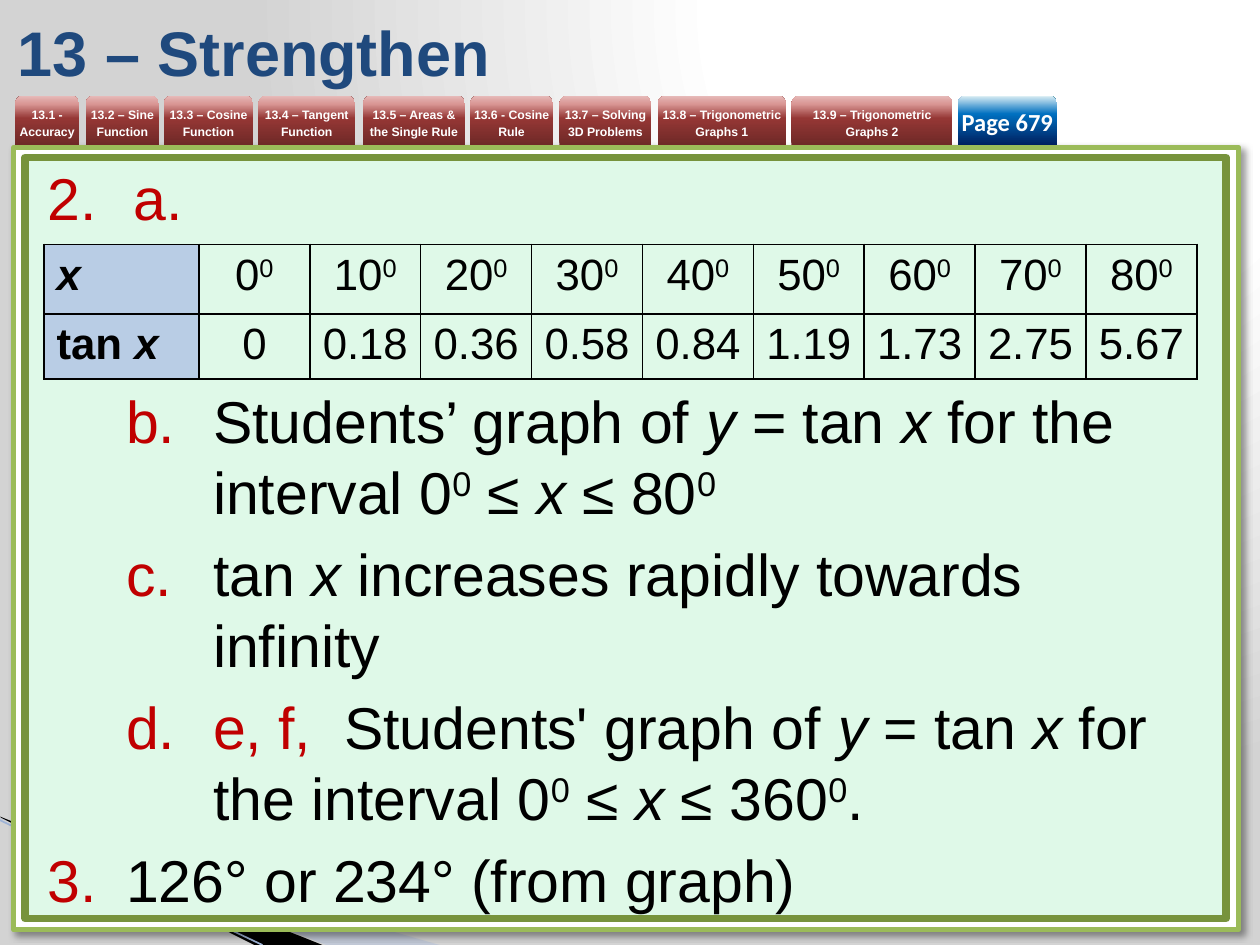
"""Build the "13 – Strengthen" answer slide with its chapter tabs and tangent table."""
from lxml import etree
from pptx import Presentation
from pptx.dml.color import RGBColor
from pptx.enum.shapes import MSO_CONNECTOR, MSO_SHAPE
from pptx.enum.text import MSO_ANCHOR, MSO_AUTO_SIZE, PP_ALIGN
from pptx.oxml import parse_xml
from pptx.oxml.ns import nsdecls, qn
from pptx.util import Pt

CENTER, LEFT, MIDDLE = PP_ALIGN.CENTER, PP_ALIGN.LEFT, MSO_ANCHOR.MIDDLE
RECT, TAB = MSO_SHAPE.RECTANGLE, MSO_SHAPE.ROUND_2_SAME_RECTANGLE

BLACK = RGBColor(0x00, 0x00, 0x00)
WHITE = RGBColor(0xFF, 0xFF, 0xFF)
NAVY = RGBColor(0x1F, 0x49, 0x7D)
RED = RGBColor(0xC0, 0x00, 0x00)
MINT = RGBColor(0xDF, 0xF9, 0xE8)
GREEN = RGBColor(0x9B, 0xBB, 0x59)
OLIVE = RGBColor(0x77, 0x93, 0x3C)
HEADER_BLUE = RGBColor(0xB9, 0xCD, 0xE5)
PALE_BLUE = RGBColor(0xA7, 0xB9, 0xDB)
EDGE_BLUE = RGBColor(0x9E, 0xB3, 0xD6)
BACKDROP = [(0, "FFFFFF"), (40, "FFFFFF"), (100, "D3D3D3")]
TAB_RED = [(0, "6F2927"), (54, "953735"), (83, "D99694"), (100, "E6B9B8")]
TAB_BLUE = [(0, "002060"), (63, "0070C0"), (100, "DBEEF4")]

TITLE = "13 – Strengthen"
CHAPTERS = [
    ("13.1 - Accuracy", 8.6, 36.7),
    ("13.2 – Sine Function", 49, 41.8),
    ("13.3 – Cosine Function", 93.6, 51.1),
    ("13.4 – Tangent Function", 147.6, 55.4),
    ("13.5 – Areas & the Single Rule", 207.4, 58.3),
    ("13.6 - Cosine Rule", 268.6, 47.5),
    ("13.7 – Solving 3D Problems", 319.7, 52.6),
    ("13.8 – Trigonometric Graphs 1", 375.8, 73.4),
    ("13.9 – Trigonometric Graphs 2", 452.2, 92.2),
]
PAGE = ("Page 679", 547.2, 56.9)

ITALIC, RAISED, MARKED = "italic", "raised", "marked"
DEGREE = ("0", RAISED)
X = ("x", ITALIC)
ANSWERS = [
    (0, "arabicPeriod", 49, 0, [("a.", MARKED)]),
    (1, "alphaLcPeriod", 94.3, 87, [
        ("Students’ graph of ", ""), ("y ", ITALIC), ("= tan ", ""), ("x ", ITALIC),
        ("for the interval 0", ""), DEGREE, (" ≤ ", ""), X, (" ≤ 80", ""), DEGREE]),
    (1, "alphaLcPeriod", 94.3, 6.5, [
        ("tan ", ""), X, (" increases rapidly towards infinity", "")]),
    (1, "alphaLcPeriod", 94.3, 6.5, [
        ("e, f,  ", MARKED), ("Students' graph of ", ""), ("y", ITALIC), (" = tan ", ""),
        ("x ", ITALIC), ("for the interval 0", ""), DEGREE, (" ≤ ", ""), X,
        (" ≤ 360", ""), DEGREE, (".", "")]),
    (0, "arabicPeriod", 44.6, 6.5, [("126° or 234° (from graph)", "")]),
]
HANGING = {0: None, 1: 49.7}
ANGLES = [0, 10, 20, 30, 40, 50, 60, 70, 80]
TANGENTS = ["0", "0.18", "0.36", "0.58", "0.84", "1.19", "1.73", "2.75", "5.67"]
TABLE_ROWS = [
    [[X]] + [[(str(angle), ""), DEGREE] for angle in ANGLES],
    [[("tan ", ""), X]] + [[(value, "")] for value in TANGENTS],
]


def gradient_xml(stops, direction):
    stop_list = "".join(
        f'<a:gs pos="{position * 1000}"><a:srgbClr val="{color}"/></a:gs>'
        for position, color in stops)
    return parse_xml(f'<a:gradFill {nsdecls("a")} rotWithShape="1">'
                     f"<a:gsLst>{stop_list}</a:gsLst>{direction}</a:gradFill>")


def set_gradient(fill, parent, stops, direction):
    fill.gradient()
    parent.replace(parent.find(qn("a:gradFill")), gradient_xml(stops, direction))


def write_runs(paragraph, pieces, size, bold=False):
    for text, style in pieces:
        run = paragraph.add_run()
        run.text = text
        font = run.font
        font.name, font.size, font.bold = "Arial", Pt(size), bold
        font.italic = style == ITALIC
        font.color.rgb = RED if style == MARKED else BLACK
        if style == RAISED:
            run._r.get_or_add_rPr().set("baseline", "30000")


def add_frame(shapes, box, fill, line, width):
    frame = shapes.add_shape(RECT, *map(Pt, box))
    frame.shadow.inherit = False
    frame.fill.solid()
    frame.fill.fore_color.rgb = fill
    frame.line.color.rgb = line
    frame.line.width = Pt(width)
    return frame


def add_tab(shapes, entry, stops, font_name, size, spacing=None):
    label, left, width = entry
    tab = shapes.add_shape(TAB, Pt(left), Pt(54.7), Pt(width), Pt(28.1))
    tab.shadow.inherit = False
    tab.line.fill.background()
    set_gradient(tab.fill, tab._element.spPr, stops, '<a:lin ang="16200000" scaled="0"/>')
    frame = tab.text_frame
    frame.margin_left = frame.margin_right = frame.margin_top = frame.margin_bottom = 0
    frame.vertical_anchor, frame.word_wrap = MIDDLE, True
    frame.text = label
    paragraph = frame.paragraphs[0]
    paragraph.alignment = CENTER
    if spacing:
        paragraph.line_spacing = Pt(spacing)
    font = paragraph.runs[0].font
    font.name, font.size, font.bold = font_name, Pt(size), True
    font.color.rgb = WHITE


def add_wedge(shapes, points, color):
    corners = [(Pt(x), Pt(y)) for x, y in points]
    builder = shapes.build_freeform(*corners[0], scale=1.0)
    builder.add_line_segments(corners[1:], close=True)
    wedge = builder.convert_to_shape()
    wedge.shadow.inherit = False
    wedge.fill.solid()
    wedge.fill.fore_color.rgb = color
    wedge.line.fill.background()
    return wedge


def add_decoration(shapes):
    pale = add_wedge(shapes, [(0, 468), (251.3, 540), (186.5, 540), (0, 467.3)], PALE_BLUE)
    tint = pale._element.spPr.find(".//" + qn("a:srgbClr"))
    etree.SubElement(tint, qn("a:alpha"), val="40000")
    add_wedge(shapes, [(0, 466.6), (184.3, 540), (145.4, 540), (0.7, 467.3)], BLACK)
    edge = shapes.add_connector(MSO_CONNECTOR.STRAIGHT, Pt(0), Pt(468.7), Pt(150), Pt(540))
    edge.line.color.rgb = EDGE_BLUE
    edge.line.width = Pt(0.95)
    etree.SubElement(edge._element.spPr, qn("a:effectLst"))

    outer = add_frame(shapes, (7.9, 84.2, 700, 447.1), WHITE, GREEN, 3)
    outer._element.spPr.find(qn("a:effectLst")).append(parse_xml(
        f'<a:outerShdw {nsdecls("a")} blurRad="50800" dist="38100" dir="2700000">'
        '<a:srgbClr val="000000"><a:alpha val="40000"/></a:srgbClr></a:outerShdw>'))
    add_frame(shapes, (14.4, 90, 686.2, 434.9), MINT, OLIVE, 4.33)


def place(placeholder, box):
    placeholder.left, placeholder.top, placeholder.width, placeholder.height = map(Pt, box)
    placeholder.text_frame.auto_size = MSO_AUTO_SIZE.NONE
    tree = placeholder._element.getparent()
    tree.append(placeholder._element)


def fill_title(title):
    place(title, (2.9, 3.6, 607, 51.1))
    title.text_frame.text = TITLE
    title.text_frame.vertical_anchor = MIDDLE
    paragraph = title.text_frame.paragraphs[0]
    paragraph.alignment = LEFT
    font = paragraph.runs[0].font
    font.name, font.size, font.bold = "Arial", Pt(36), True
    font.color.rgb = NAVY


def fill_answers(body):
    place(body, (20.2, 88.6, 674.6, 439.9))
    frame = body.text_frame
    for index, (level, numbering, indent, gap, pieces) in enumerate(ANSWERS):
        paragraph = frame.paragraphs[0] if index == 0 else frame.add_paragraph()
        paragraph.level = level
        paragraph.line_spacing = 1.0
        paragraph.space_before = Pt(gap)
        properties = paragraph._p.get_or_add_pPr()
        properties.set("marL", str(Pt(indent)))
        properties.set("indent", str(-Pt(HANGING[level] or indent)))
        color = etree.SubElement(properties, qn("a:buClr"))
        etree.SubElement(color, qn("a:srgbClr"), val=str(RED))
        etree.SubElement(properties, qn("a:buFont"), typeface="+mj-lt")
        etree.SubElement(properties, qn("a:buAutoNum"), type=numbering, startAt="2")
        write_runs(paragraph, pieces, 33.7)


def add_tangent_table(shapes):
    columns = len(TABLE_ROWS[0])
    table = shapes.add_table(2, columns, Pt(25.2), Pt(139.7), Pt(658.8), Pt(77)).table
    for index, column in enumerate(table.columns):
        column.width = Pt(88.5 if index == 0 else 63.36)
    for row, height, entries in zip(table.rows, (39.6, 37.4), TABLE_ROWS):
        row.height = Pt(height)
        for index, (cell, pieces) in enumerate(zip(row.cells, entries)):
            heading = index == 0
            paragraph = cell.text_frame.paragraphs[0]
            paragraph.alignment = LEFT if heading else CENTER
            write_runs(paragraph, pieces, 25, heading)
            properties = cell._tc.get_or_add_tcPr()
            for side in ("lnL", "lnR", "lnT", "lnB"):
                properties.append(parse_xml(
                    f'<a:{side} {nsdecls("a")} w="12700"><a:solidFill>'
                    f'<a:srgbClr val="{BLACK}"/></a:solidFill></a:{side}>'))
            if heading:
                cell.fill.solid()
                cell.fill.fore_color.rgb = HEADER_BLUE
            else:
                cell.fill.background()


def main():
    deck = Presentation()
    deck.slide_width, deck.slide_height = Pt(720), Pt(540)
    slide = deck.slides.add_slide(deck.slide_layouts[1])
    shapes = slide.shapes
    title, body = slide.placeholders
    set_gradient(slide.background.fill, slide._element.cSld.bg.bgPr, BACKDROP,
                 '<a:path path="circle"><a:fillToRect l="65000" b="98000"/></a:path>')
    add_decoration(shapes)
    for chapter in CHAPTERS:
        add_tab(shapes, chapter, TAB_RED, "Arial", 7, 10)
    fill_title(title)
    add_tab(shapes, PAGE, TAB_BLUE, "Calibri", 14)
    fill_answers(body)
    add_tangent_table(shapes)
    deck.save("out.pptx")


if __name__ == "__main__":
    main()
